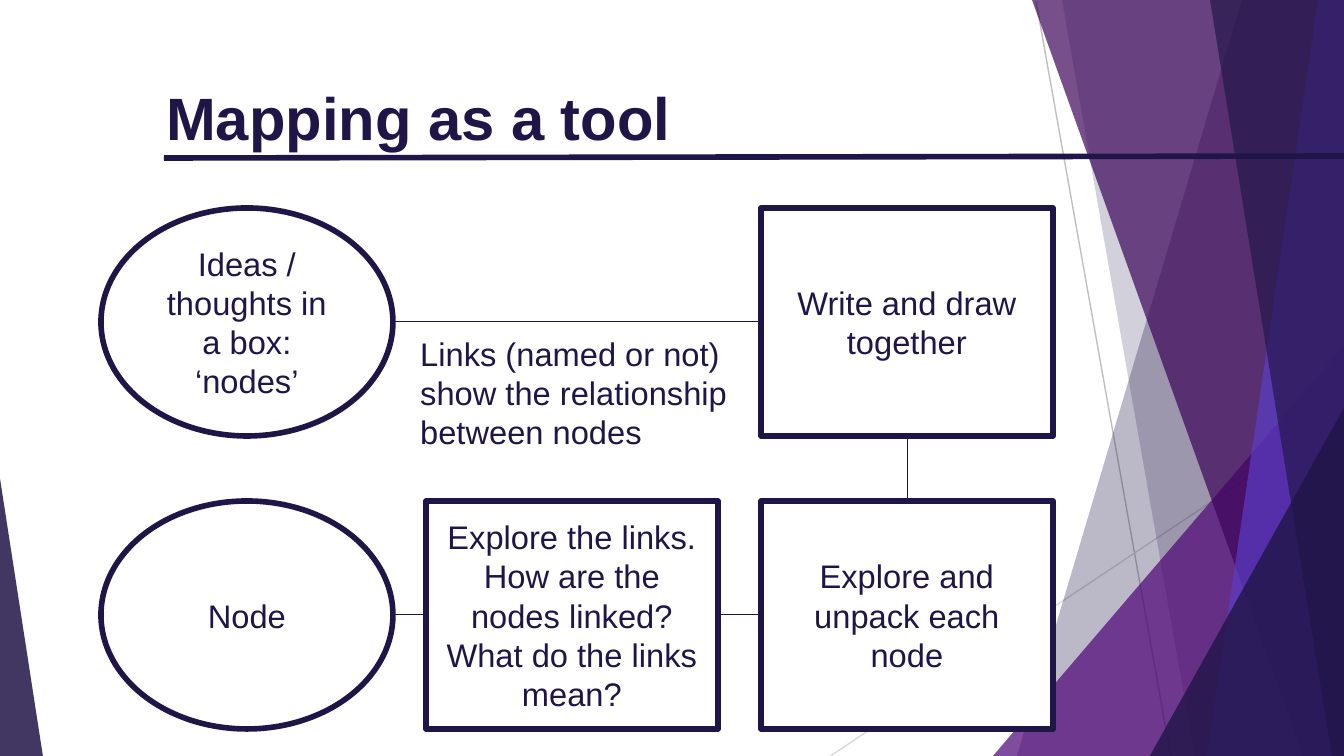
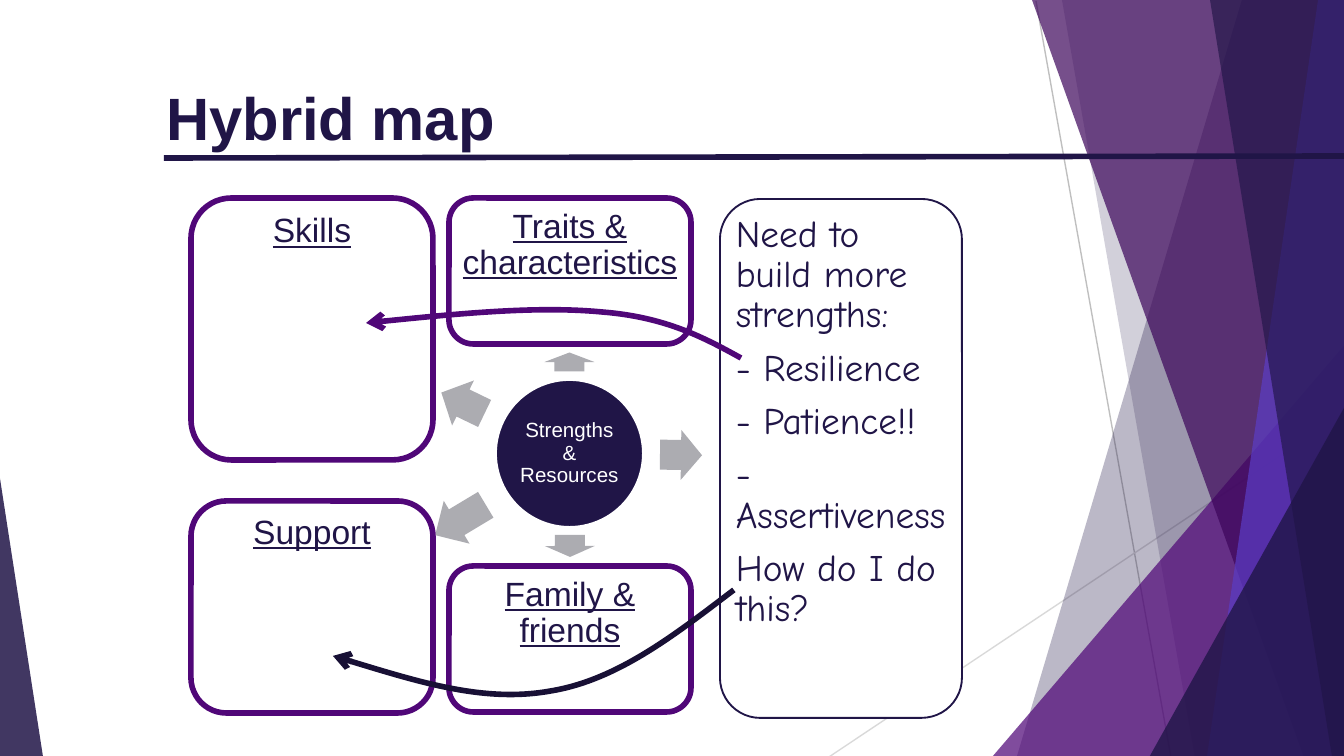
from lxml.etree import SubElement
from pptx import Presentation
from pptx.dml.color import RGBColor
from pptx.enum.shapes import MSO_CONNECTOR, MSO_SHAPE as SHAPE
from pptx.enum.text import MSO_ANCHOR as ANCHOR, PP_ALIGN as ALIGN
from pptx.oxml.ns import qn
from pptx.util import Pt

PX = 914400 / 134.4
WIDTH, HEIGHT = 1344, 756
COLORS = {
    "navy": "201547", "purple": "500778", "plum": "3C055A", "violet": "5B3DC6",
    "ink": "181035", "arrow": "ACACB1", "white": "FFFFFF",
    "grey": "BFBFBF", "pale": "D9D9D9",
}
BODY_FONT, HAND_FONT = "Arial", "Comic Neue"

# Background facets, back to front
BLEED_RIGHT, BLEED_BOTTOM = 1349, 763
THIN_LINES = [((1036, 1), (1172, 763), "grey"), ((1349, 410), (820, 763), "pale")]
FACETS = [  # band: top x, bottom x; wedge: left, top, right, apex position
    ("band", (1242, 1015), "navy", 30),
    ("band", (1062, 1196), "navy", 20),
    ("wedge", (987, 340, 1349, 1), "purple", 72),
    ("band", (1032, 1306), "plum", 70),
    ("band", (1318, 1206), "violet", 70),
    ("band", (1210, 1333), "navy", 65),
    ("wedge", (1146, 399, 1349, 1), "navy", 80),
    ("wedge", (-5, 446, 44, 0), "navy", 85),
]

# Slide 1
NODE_W, NODE_H = 292, 228
COLUMNS, ROWS = (101, 426, 761), (208, 501)
NODES = {  # name: (shape, column, row, text)
    "ideas": (SHAPE.OVAL, 0, 0, "Ideas / thoughts in a box: ‘nodes’"),
    "write": (SHAPE.RECTANGLE, 2, 0, "Write and draw together"),
    "unpack": (SHAPE.RECTANGLE, 2, 1, "Explore and unpack each node"),
    "explore": (SHAPE.RECTANGLE, 1, 1,
                "Explore the links.\nHow are the nodes linked?\nWhat do the links mean?"),
    "node": (SHAPE.OVAL, 0, 1, "Node"),
}
TOP, LEFT, BOTTOM, RIGHT = range(4)
LINKS = [("ideas", RIGHT, "write", LEFT), ("write", BOTTOM, "unpack", TOP),
         ("unpack", LEFT, "explore", RIGHT), ("explore", LEFT, "node", RIGHT)]
LINK_NOTE = "Links (named or not) show the relationship between nodes"

# Slide 2
HUB = (496, 380, 147, 147)
HUB_TEXT = "Strengths & Resources"
ARROWS = [  # left, top, length, rotation
    (560, 337, 19, 270), (660, 430, 42, 0.9), (559, 521, 22, 89.8),
    (431, 495, 59, 149), (439, 378, 48, 205.8),
]
ARROW_H, BOX_W = 50, 242
BOXES = [  # left, top, height, text
    (449, 198, 146, "Traits & characteristics"),
    (449, 566, 146, "Family & friends"),
    (191, 501, 212, "Support"),
    (191, 198, 262, "Skills"),
]
NEEDS_BOX = (720, 199, BOX_W, 519)
NEEDS = ["Need to build more strengths:", "- Resilience", "- Patience!!",
         "- Assertiveness", "How do I do this?"]
CURVES = [  # start point, then two controls and an end for each segment
    ("purple", [(741, 358), (703, 337), (665, 317), (602, 312),
                (539, 306), (453, 314), (366, 323)]),
    ("ink", [(734, 590), (676, 634), (618, 680), (551, 691),
             (485, 703), (409, 679), (333, 656)]),
]


def px(*values):
    return [round(v * PX) for v in values]


def rgb(name):
    return RGBColor.from_string(COLORS[name])


def paint(s, fill=None, line=None, width=1.0, alpha=None):
    """Set fill and outline, with alpha as a percentage."""
    s.shadow.inherit = False
    if fill:
        s.fill.solid()
        s.fill.fore_color.rgb = rgb(fill)
    else:
        s.fill.background()
    if alpha:
        color = s.element.spPr.find(qn("a:solidFill"))[0]
        SubElement(color, qn("a:alpha")).set("val", str(alpha * 1000))
    if line:
        s.line.color.rgb = rgb(line)
        s.line.width = Pt(width)
    else:
        s.line.fill.background()


def add_shape(slide, kind, box, **style):
    s = slide.shapes.add_shape(kind, *px(*box))
    paint(s, **style)
    return s


def add_line(slide, start, end, color, width):
    s = slide.shapes.add_connector(MSO_CONNECTOR.STRAIGHT, *px(*start, *end))
    s.line.color.rgb = rgb(color)
    s.line.width = Pt(width)
    SubElement(s.element.spPr, qn("a:effectLst"))
    return s


def add_freeform(slide, points, closed, **style):
    builder = slide.shapes.build_freeform(*points[0], scale=PX)
    builder.add_line_segments(points[1:], close=closed)
    s = builder.convert_to_shape()
    paint(s, **style)
    return s


def write(s, text, size, color="navy", font=BODY_FONT, align=ALIGN.CENTER,
          anchor=ANCHOR.MIDDLE, bold=False, underline=False, margin=None, tight=False):
    """Fill a shape with text; tight means 90% lines and a gap after paragraphs."""
    tf = s.text_frame
    tf.text = text
    tf.word_wrap = True
    tf.vertical_anchor = anchor
    if margin is not None:
        inset = px(margin)[0]
        tf.margin_left = tf.margin_right = tf.margin_top = tf.margin_bottom = inset
    for p in tf.paragraphs:
        p.alignment = align
        if tight:
            p.line_spacing = 0.9
            p.space_after = Pt(size * 0.35)
        for r in p.runs:
            r.font.name = font
            r.font.size = Pt(size)
            r.font.bold = bold
            r.font.underline = underline
            r.font.color.rgb = rgb(color)


def add_text(slide, box, text, size, **style):
    s = slide.shapes.add_textbox(*px(*box))
    write(s, text, size, align=ALIGN.LEFT, anchor=ANCHOR.TOP, **style)


def add_curve(slide, points, color):
    """Draw a Bezier curve that ends in an open arrowhead."""
    s = add_freeform(slide, points, False, line=color, width=3)
    outline = next(s.element.iter(qn("a:path")))
    steps = outline.findall(qn("a:lnTo"))
    for i in range(0, len(steps), 3):
        segment = SubElement(outline, qn("a:cubicBezTo"))
        for step in steps[i:i + 3]:
            segment.append(step[0])
            outline.remove(step)
    SubElement(s.element.spPr.find(qn("a:ln")), qn("a:tailEnd")).set("type", "arrow")


def new_slide(prs, title):
    slide = prs.slides.add_slide(prs.slide_layouts[6])
    for start, end, color in THIN_LINES:
        add_line(slide, start, end, color, 0.75)
    for kind, place, color, alpha in FACETS:
        if kind == "band":
            top_x, bottom_x = place
            points = [(top_x, 0), (BLEED_RIGHT, 0),
                      (BLEED_RIGHT, BLEED_BOTTOM), (bottom_x, BLEED_BOTTOM)]
            add_freeform(slide, points, True, fill=color, alpha=alpha)
        else:
            left, top, right, apex = place
            s = add_shape(slide, SHAPE.ISOSCELES_TRIANGLE,
                          (left, top, right - left, BLEED_BOTTOM - top),
                          fill=color, alpha=alpha)
            s.adjustments[0] = apex
    add_line(slide, (164, 158), (WIDTH, 156), "navy", 3)
    add_text(slide, (153, 74, 921, 145), title, 32, bold=True)
    return slide


def side_point(column, row, side):
    x, y = COLUMNS[column], ROWS[row]
    dx, dy = {TOP: (0.5, 0), LEFT: (0, 0.5), BOTTOM: (0.5, 1), RIGHT: (1, 0.5)}[side]
    return x + dx * NODE_W, y + dy * NODE_H


def mapping_slide(prs):
    slide = new_slide(prs, "Mapping as a tool")
    drawn = {}
    for name, (kind, column, row, text) in NODES.items():
        box = (COLUMNS[column], ROWS[row], NODE_W, NODE_H)
        drawn[name] = add_shape(slide, kind, box, fill="white", line="navy", width=3)
        write(drawn[name], text, 17.5)
    for a, side_a, b, side_b in LINKS:
        start = side_point(*NODES[a][1:3], side_a)
        end = side_point(*NODES[b][1:3], side_b)
        link = add_line(slide, start, end, "navy", 0.5)
        if NODES[a][0] == SHAPE.RECTANGLE:
            link.begin_connect(drawn[a], side_a)
        if NODES[b][0] == SHAPE.RECTANGLE:
            link.end_connect(drawn[b], side_b)
    add_text(slide, (407, 327, 349, 132), LINK_NOTE, 17.5)


def hybrid_slide(prs):
    slide = new_slide(prs, "Hybrid map")
    hub = add_shape(slide, SHAPE.OVAL, HUB, fill="navy", line="white")
    write(hub, HUB_TEXT, 11, color="white", margin=2, tight=True)
    for left, top, length, rotation in ARROWS:
        s = add_shape(slide, SHAPE.RIGHT_ARROW, (left, top, length, ARROW_H), fill="arrow")
        s.adjustments[0], s.adjustments[1] = 0.6, 0.5
        s.rotation = rotation
    for left, top, height, text in BOXES:
        s = add_shape(slide, SHAPE.ROUNDED_RECTANGLE, (left, top, BOX_W, height),
                      fill="white", line="purple", width=3)
        write(s, text, 18, anchor=ANCHOR.TOP, underline=True, margin=4, tight=True)
    s = add_shape(slide, SHAPE.ROUNDED_RECTANGLE, NEEDS_BOX, fill="white", line="navy")
    write(s, "\n".join(NEEDS), 20, font=HAND_FONT, align=ALIGN.LEFT,
          anchor=ANCHOR.TOP, margin=4, tight=True)
    for color, points in CURVES:
        add_curve(slide, points, color)


def main():
    prs = Presentation()
    prs.slide_width, prs.slide_height = px(WIDTH, HEIGHT)
    mapping_slide(prs)
    hybrid_slide(prs)
    prs.save("out.pptx")


if __name__ == "__main__":
    main()
